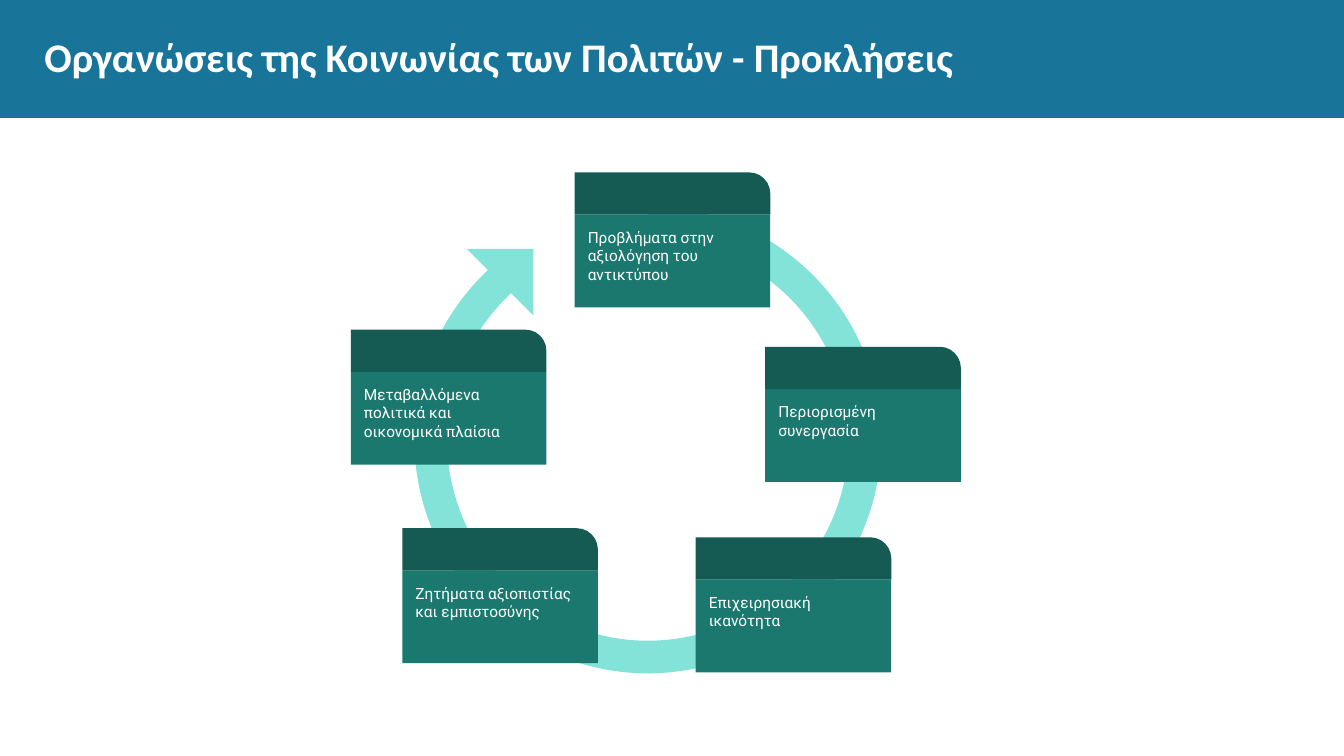
import pptx
import pptx.dml.color
import pptx.enum.shapes
import pptx.enum.text
import pptx.util

Inches, Pt = pptx.util.Inches, pptx.util.Pt
SHAPE = pptx.enum.shapes.MSO_SHAPE
ALIGN = pptx.enum.text.PP_ALIGN
ANCHOR = pptx.enum.text.MSO_ANCHOR

TITLE = "Οργανώσεις της Κοινωνίας των Πολιτών - Προκλήσεις"
# text, left, top of each card
CARDS = [
    ("Προβλήματα στην αξιολόγηση του αντικτύπου", 5.7, 1.71),
    ("Μεταβαλλόμενα πολιτικά και οικονομικά πλαίσια", 3.48, 3.27),
    ("Επιχειρησιακή ικανότητα", 6.9, 5.33),
    ("Ζητήματα αξιοπιστίας και εμπιστοσύνης", 3.99, 5.24),
    ("Περιορισμένη συνεργασία", 7.59, 3.44),
]
CARD_W, TAB_H, BODY_H = 1.94, 0.42, 0.92
BLUE, MINT, GREEN, DARK_GREEN, WHITE = "187498", "83E3D9", "1B786E", "155B54", "FFFFFF"


def rgb(color):
    return pptx.dml.color.RGBColor.from_string(color)


def add_filled(shapes, kind, left, top, width, height, color):
    sp = shapes.add_shape(kind, Inches(left), Inches(top), Inches(width), Inches(height))
    sp.shadow.inherit = False
    sp.fill.solid()
    sp.fill.fore_color.rgb = rgb(color)
    sp.line.fill.background()
    return sp


def write(sp, text, font, size, inset, anchor, bold=False):
    tf = sp.text_frame
    tf.text = text
    tf.word_wrap = True
    tf.auto_size = pptx.enum.text.MSO_AUTO_SIZE.NONE
    tf.vertical_anchor = anchor
    tf.margin_left = tf.margin_top = tf.margin_right = tf.margin_bottom = Inches(inset)
    p = tf.paragraphs[0]
    p.alignment = ALIGN.LEFT
    r = p.runs[0]
    r.font.name, r.font.size, r.font.bold = font, Pt(size), bold
    r.font.color.rgb = rgb(WHITE)
    return p


def add_cycle_arrow(shapes):
    group = shapes.add_group_shape().shapes
    ring = add_filled(group, SHAPE.BLOCK_ARC, 4.11, 2.05, 4.63, 4.63, MINT)
    for i, value in enumerate((54, 30.13, 0.07)):
        ring.adjustments[i] = value
    head = add_filled(group, SHAPE.RIGHT_TRIANGLE, 4.63, 2.47, 0.66, 0.66, MINT)
    ring.rotation = head.rotation = 180


def add_card(shapes, text, left, top):
    group = shapes.add_group_shape().shapes
    body = add_filled(group, SHAPE.RECTANGLE, left, top + TAB_H, CARD_W, BODY_H, GREEN)
    write(body, text, "Roboto", 11, 0.13, ANCHOR.TOP)
    tab = add_filled(group, SHAPE.ROUND_1_RECTANGLE, left, top, CARD_W, TAB_H, DARK_GREEN)
    tab.adjustments[0] = 0.5


def main():
    prs = pptx.Presentation()
    prs.slide_width, prs.slide_height = Inches(13.33), Inches(7.5)
    s = prs.slides.add_slide(prs.slide_layouts.get_by_name("Title Only"))

    banner = add_filled(s.shapes, SHAPE.RECTANGLE, 0, 0, 13.33, 1.17, BLUE)
    title = s.shapes.title
    banner.element.addnext(title.element)
    title.left, title.top = Inches(0.44), Inches(0.19)
    title.width, title.height = Inches(12.46), Inches(0.74)
    p = write(title, TITLE, "Calibri", 29, 0, ANCHOR.MIDDLE, bold=True)
    p.space_before = Pt(12)

    add_cycle_arrow(s.shapes)
    for text, left, top in CARDS:
        add_card(s.shapes, text, left, top)
    prs.save("out.pptx")


if __name__ == "__main__":
    main()
